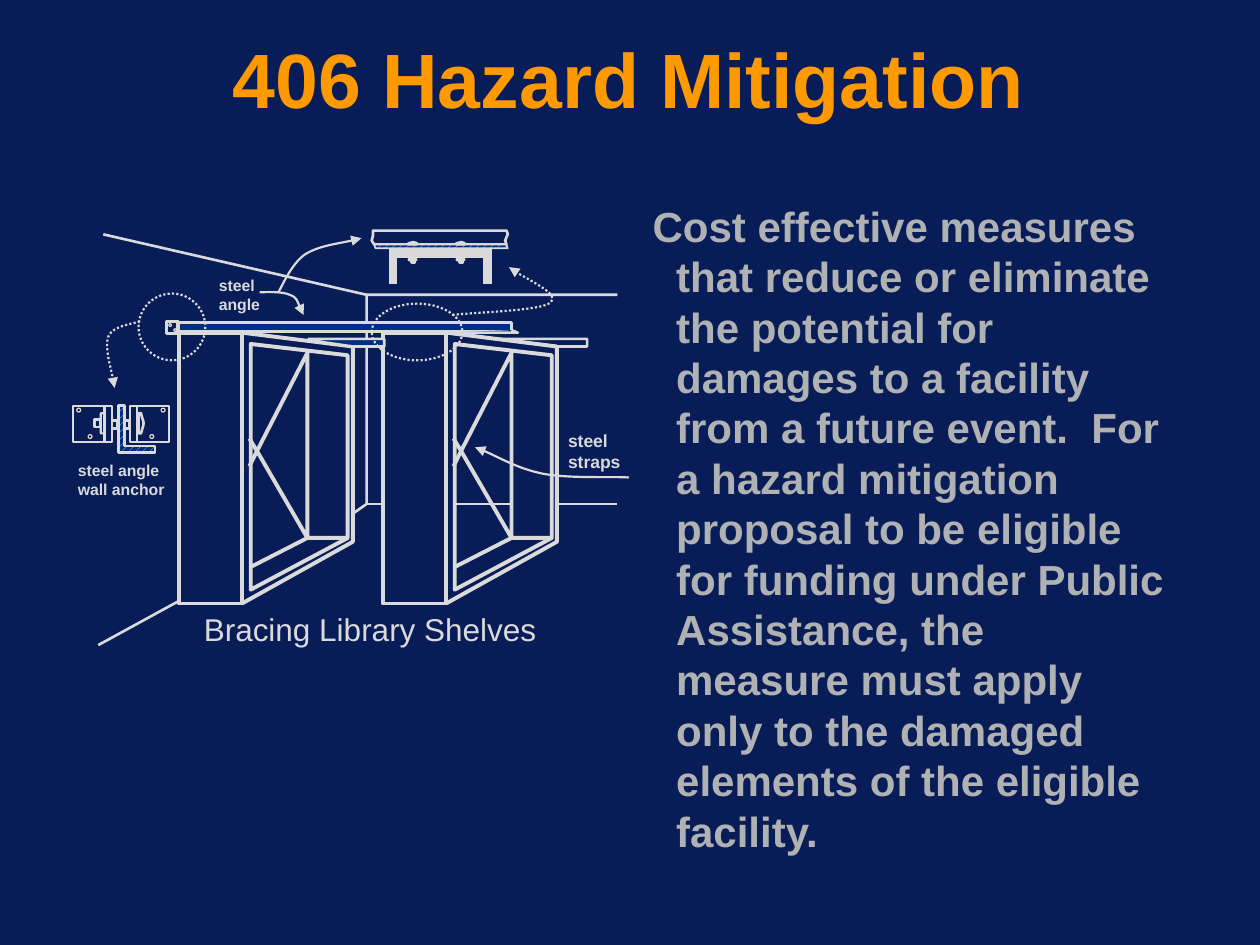
from lxml import etree
from pptx import Presentation
from pptx.dml.color import RGBColor
from pptx.enum.dml import MSO_LINE, MSO_PATTERN
from pptx.enum.shapes import MSO_CONNECTOR, MSO_SHAPE
from pptx.enum.text import PP_ALIGN
from pptx.oxml.ns import qn
from pptx.util import Pt

RECT, ROUND, ELLIPSE = MSO_SHAPE.RECTANGLE, MSO_SHAPE.ROUNDED_RECTANGLE, MSO_SHAPE.OVAL
STRAIGHT = MSO_CONNECTOR.STRAIGHT
DOTTED = MSO_LINE.ROUND_DOT
HATCH = MSO_PATTERN.WIDE_UPWARD_DIAGONAL
LEFT, CENTER = PP_ALIGN.LEFT, PP_ALIGN.CENTER
NAVY, BLUE, CHALK, ORANGE, GREY, BLACK = "081D58", "002F80", "DADADA", "FF9900", "B0B1B3", "000000"
UNIT = 0.72
SHELF_GAP = 162
ANCHOR_MIRROR = 192
BODY = (
    "Cost effective measures that reduce or eliminate the potential for damages to a facility "
    "from a future event.  For a hazard mitigation proposal to be eligible for funding under "
    "Public Assistance, the measure must apply only to the damaged elements of the eligible facility."
)


def rgb(value):
    """Turn a hex string into a colour."""
    return RGBColor.from_string(value)


def grid(value):
    """Convert drawing units to a length."""
    return Pt(value * UNIT)


def add_text(slide, text, left, top, width, height, size, color=CHALK, bold=True,
             align=LEFT, spacing=1.0, hanging=0, wrap=False):
    """Add a text box with one paragraph per line of text."""
    box = slide.shapes.add_textbox(Pt(left), Pt(top), Pt(width), Pt(height))
    frame = box.text_frame
    frame.word_wrap = wrap
    frame.text = text
    for paragraph in frame.paragraphs:
        properties = paragraph._p.get_or_add_pPr()
        properties.set("marL", str(Pt(hanging)))
        properties.set("indent", str(-Pt(hanging)))
        paragraph.alignment = align
        paragraph.line_spacing = Pt(round(size * 1.2 * spacing, 2))
        for run in paragraph.runs:
            run.font.name, run.font.size, run.font.bold = "Arial", Pt(size), bold
            run.font.color.rgb = rgb(color)


def style(shape, weight, fill=None, hatched=False, dotted=False):
    """Set the fill and outline of a closed or open shape."""
    shape.shadow.inherit = False
    if hatched:
        shape.fill.patterned()
        shape.fill.pattern = HATCH
        shape.fill.fore_color.rgb = rgb(CHALK)
        shape.fill.back_color.rgb = rgb(BLUE)
    elif fill:
        shape.fill.solid()
        shape.fill.fore_color.rgb = rgb(fill)
    else:
        shape.fill.background()
    shape.line.color.rgb = rgb(CHALK)
    shape.line.width = Pt(weight)
    if dotted:
        shape.line.dash_style = DOTTED


def add_part(slide, kind, left, top, width, height, weight, **look):
    """Add a preset shape given in drawing units."""
    part = slide.shapes.add_shape(kind, grid(left), grid(top), grid(width), grid(height))
    style(part, weight, **look)


def add_line(slide, x1, y1, x2, y2, weight=1.5):
    """Add a straight line given in drawing units."""
    line = slide.shapes.add_connector(STRAIGHT, grid(x1), grid(y1), grid(x2), grid(y2))
    line.line.color.rgb = rgb(CHALK)
    line.line.width = Pt(weight)
    etree.SubElement(line._element.spPr, qn("a:effectLst"))


def add_outline(slide, points, weight=1.5, closed=False, arrow=False, **look):
    """Add a freeform in which pairs are corners and six numbers are a Bézier curve."""
    corners = [step[i:i + 2] for step in points for i in range(0, len(step), 2)]
    builder = slide.shapes.build_freeform(*corners[0], scale=grid(1))
    builder.add_line_segments(corners[1:], close=closed)
    outline = builder.convert_to_shape()
    style(outline, weight, **look)
    properties = outline._element.spPr
    geometry = next(properties.iter(qn("a:path")))
    segments = iter(geometry.findall(qn("a:lnTo")))
    for step in points[1:]:
        first = next(segments)
        if len(step) == 6:
            curve = etree.Element(qn("a:cubicBezTo"))
            first.addprevious(curve)
            for segment in (first, next(segments), next(segments)):
                curve.append(segment[0])
                geometry.remove(segment)
    if arrow:
        etree.SubElement(properties.find(qn("a:ln")), qn("a:tailEnd"), type="triangle")


def add_shelf(slide, dx):
    """Draw one shelf unit with its crossed straps, moved right by dx."""
    add_part(slide, RECT, 142 + dx, 264, 50, 215, 2.25)
    panels = [
        ([(192, 479), (280, 430), (280, 275)], False),
        ([(199, 468), (276, 427), (276, 282), (199, 273)], True),
        ([(199, 450), (244, 427), (204, 358), (244, 280), (244, 427), (276, 427)], False),
        ([(198, 370), (204, 358), (198, 348)], False),
    ]
    for points, closed in panels:
        add_outline(slide, [(x + dx, y) for x, y in points], 2.25, closed)
    add_line(slide, 192 + dx, 264, 280 + dx, 275, 2.25)


def add_room(slide):
    """Draw the walls, the floor, both shelves and the steel angles on top."""
    add_outline(slide, [(281, 407), (291, 400), (291, 234), (490, 234)])
    for dx in (SHELF_GAP, 0):
        add_shelf(slide, dx)
    add_part(slide, RECT, 141, 256, 265, 7, 1.75, fill=BLUE)
    add_outline(slide, [(354, 264), (411, 264), (406, 262)], fill=BLUE)
    add_line(slide, 78, 512, 142, 477)
    add_line(slide, 291, 234, 82, 186)
    add_outline(slide, [(245, 269), (305, 269), (305, 275), (280, 275), (245, 270)],
                closed=True, fill=BLUE)
    add_outline(slide, [(395, 269), (466, 269), (466, 275), (443, 275)], closed=True)
    for start, end in ((291, 305), (361, 407), (443, 490)):
        add_line(slide, start, 400, end, 400)
    add_outline(slide, [(142, 265), (132, 265), (132, 255), (142, 255), (142, 264)], 1.75)
    for left, top in ((138, 261), (134, 257)):
        add_part(slide, ELLIPSE, left, top, 2, 2, 0.75)


def add_anchor_plate(slide, mirrored):
    """Draw one plate of the wall anchor with its holes and bolt shank."""
    def flip(x, width=0):
        return ANCHOR_MIRROR - x - width if mirrored else x

    plate = [(83, 351), (83, 322), (58, 322), (58, 351), (89, 351), (89, 322), (83, 322)]
    add_outline(slide, [(flip(x), y) for x, y in plate], 1.25)
    for left, top in ((61, 324), (70, 345)):
        add_part(slide, ELLIPSE, flip(left, 3), top, 3, 3, 0.75, fill=BLACK)
    add_part(slide, RECT, flip(89, 4), 334, 4, 6, 1.5)


def add_wall_anchor(slide):
    """Draw the wall anchor detail and its dotted callout."""
    add_part(slide, ELLIPSE, 110, 233, 53, 53, 1.25, dotted=True)
    add_anchor_plate(slide, False)
    add_part(slide, ROUND, 80, 328, 3, 16, 1.25)
    add_part(slide, RECT, 75, 333, 5, 6, 1.5)
    add_outline(slide, [(94, 322), (94, 359), (123, 359), (123, 354), (99, 354), (99, 322)],
                closed=True, hatched=True)
    add_anchor_plate(slide, True)
    add_outline(slide, [(110, 328), (110, 344), (112, 344), (112, 343, 114, 338, 114, 336),
                        (114, 334, 112, 330, 112, 328)], closed=True)
    add_outline(slide, [(111, 255), (107, 257, 90, 258, 86, 267), (83, 276, 90, 299, 91, 308)],
                1.25, arrow=True, dotted=True)


def add_angle_detail(slide):
    """Draw the bolted steel angle detail and its dotted callout."""
    add_part(slide, ELLIPSE, 295, 241, 72, 45, 1.25, dotted=True)
    add_outline(slide, [(402, 183), (296, 183), (296, 187), (296, 188, 295, 190, 295, 191),
                        (297, 194), (402, 194), (401, 191), (401, 189, 403, 187, 403, 186),
                        (403, 185, 402, 183, 402, 183)], closed=True)
    add_outline(slide, [(297, 194), (298, 197), (403, 197), (402, 194)], 1,
                closed=True, hatched=True)
    for left in (324, 362):
        add_outline(slide, [(left, 194), (left + 7, 194), (left + 7, 193),
                            (left + 7, 193, left + 5, 192, left + 4, 192),
                            (left + 3, 192, left + 1, 193, left, 193)], 1.25, closed=True)
        add_part(slide, ROUND, left + 0.5, 205.5, 6, 1, 1.25)
        add_part(slide, RECT, left + 2.5, 206.5, 3, 2, 1.5)
    add_outline(slide, [(359, 250), (372, 248, 430, 247, 437, 240), (445, 234, 411, 218, 404, 212)],
                1.25, arrow=True, dotted=True)
    for leg in (312, 387):
        add_line(slide, leg, 225, leg, 198, 5)
    add_line(slide, 312, 201, 387, 201, 5)


def add_labels(slide):
    """Add the labels of the drawing and their curved arrows."""
    add_text(slide, "steel\nstraps", 317.5, 242, 44.6, 31, 10)
    add_text(slide, "steel\nangle", 118, 154, 38.2, 28.8, 9)
    add_text(slide, "steel angle\nwall anchor", 37.4, 260, 64, 28.8, 9)
    add_text(slide, "Bracing Library Shelves", 109.4, 345, 204.5, 28.8, 18, bold=False)
    arrows = [
        [(499, 379), (488, 378, 452, 380, 431, 376), (411, 372, 389, 359, 377, 355)],
        [(206, 232), (210, 232, 224, 231, 230, 234), (236, 236, 239, 247, 241, 250)],
        [(221, 232), (224, 227, 231, 210, 242, 202), (253, 195, 278, 192, 287, 189)],
    ]
    for points in arrows:
        add_outline(slide, points, 1.25, arrow=True)


def main():
    """Build the slide and save it."""
    deck = Presentation()
    deck.slide_width, deck.slide_height = Pt(720), Pt(540)
    slide = deck.slides.add_slide(deck.slide_layouts[6])
    slide.background.fill.solid()
    slide.background.fill.fore_color.rgb = rgb(NAVY)
    add_text(slide, "406 Hazard Mitigation", 25.2, 22.3, 668.2, 74.2, 44, color=ORANGE,
             align=CENTER, spacing=0.85, wrap=True)
    add_text(slide, BODY, 365.8, 110.9, 308.2, 392.4, 24, color=GREY, hanging=13.5, wrap=True)
    add_room(slide)
    add_wall_anchor(slide)
    add_angle_detail(slide)
    add_labels(slide)
    deck.save("out.pptx")


if __name__ == "__main__":
    main()
